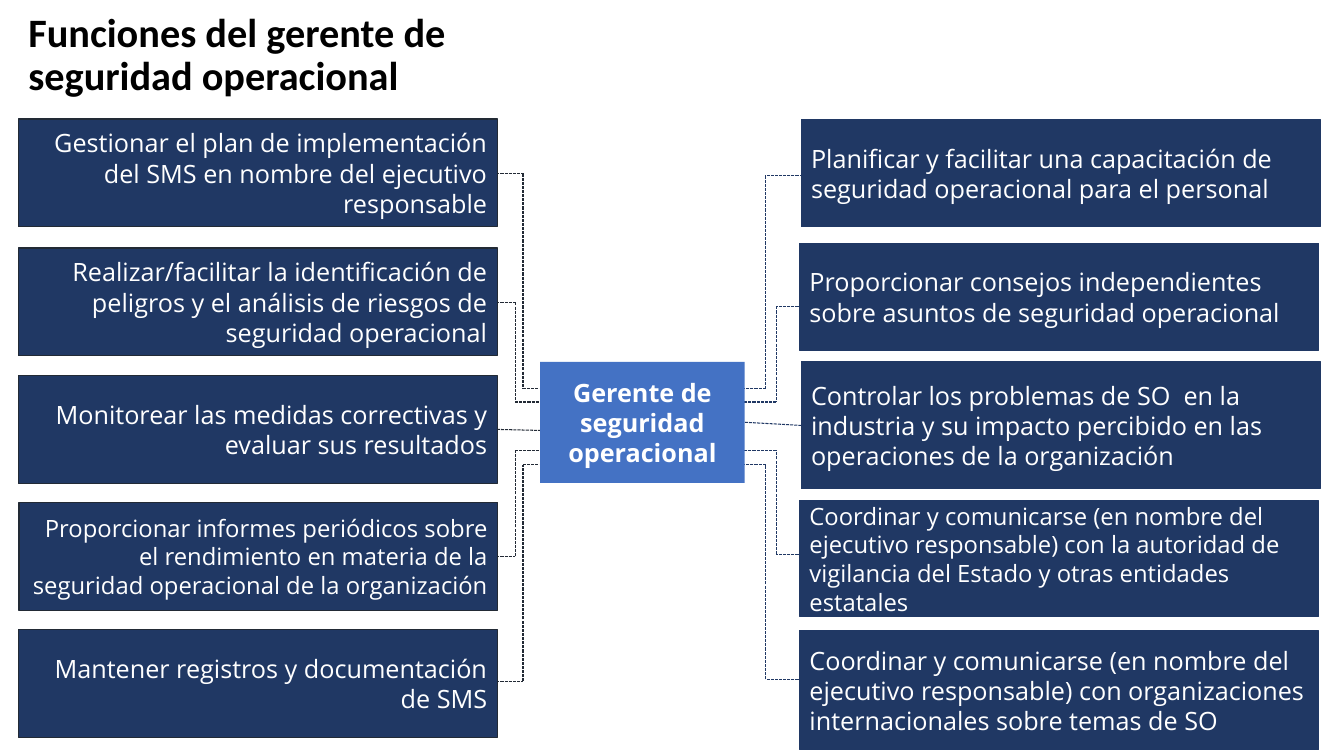
from lxml.etree import SubElement
from pptx import Presentation
from pptx.dml.color import RGBColor
from pptx.enum.dml import MSO_LINE
from pptx.enum.shapes import MSO_CONNECTOR as Link, MSO_SHAPE as Form
from pptx.enum.text import MSO_ANCHOR as Anchor, MSO_AUTO_SIZE as Fit, PP_ALIGN as Align
from pptx.oxml.ns import qn
from pptx.util import Cm, Pt

NAVY, SLATE, BLUE = "203864", "222A35", "4472C4"

LEFT = [
    (0.46, 3.0, 2.72, 18, "Gestionar el plan de implementación del SMS en nombre del ejecutivo responsable"),
    (0.46, 6.25, 2.72, 18, "Realizar/facilitar la identificación de peligros y el análisis de riesgos de seguridad operacional"),
    (0.46, 9.47, 2.72, 18, "Monitorear las medidas correctivas y evaluar sus resultados"),
    (0.48, 12.66, 2.72, 17, "Proporcionar informes periódicos sobre el rendimiento en materia de la seguridad operacional de la organización"),
    (0.46, 15.86, 2.72, 18, "Mantener registros y documentación de SMS"),
]
RIGHT = [
    (20.19, 3.02, 2.7, 18, "Planificar y facilitar una capacitación de seguridad operacional para el personal"),
    (20.15, 6.13, 2.7, 18, "Proporcionar consejos independientes sobre asuntos de seguridad operacional"),
    (20.19, 9.12, 3.2, 18, "Controlar los problemas de SO  en la industria y su impacto percibido en las operaciones de la organización"),
    (20.15, 12.62, 2.92, 17, "Coordinar y comunicarse (en nombre del ejecutivo responsable) con la autoridad de vigilancia del Estado y otras entidades estatales"),
    (20.15, 15.9, 3.0, 18, "Coordinar y comunicarse (en nombre del ejecutivo responsable) con organizaciones internacionales sobre temas de SO"),
]
PORTS = [9.78, 10.13, 11.35, 11.71]
SIDES = [
    (LEFT, 12.07, SLATE, Align.RIGHT, 9.7, (13.18, 12.98), 14.22,
     (4.37, 7.62, 14.02, 17.17), (12.52, 10.82, 13.77, 10.85)),
    (RIGHT, 13.08, NAVY, Align.LEFT, 23.14, (19.3, 19.56), 18.16,
     (4.42, 7.72, 13.97, 17.12), (18.77, 10.64, 20.19, 10.72)),
]


def tint(code):
    """Turn a hex string into a colour."""
    return RGBColor.from_string(code)


class Deck:
    """Hold the text style and the current slide."""

    def __init__(self):
        """Open a title-only slide."""
        self.show = Presentation()
        self.show.slide_width, self.show.slide_height = Cm(33.87), Cm(19.05)
        self.slide = self.show.slides.add_slide(self.show.slide_layouts[5])
        self.style = {"name": "Open Sans", "size": Pt(18), "bold": False}

    def label(self, shape, text, anchor, align, ink, **style):
        """Fill a shape with one styled paragraph."""
        frame = shape.text_frame
        frame.text = text
        for key, value in {"word_wrap": True, "auto_size": Fit.NONE, "vertical_anchor": anchor}.items():
            setattr(frame, key, value)
        par = frame.paragraphs[0]
        par.alignment = align
        font = par.runs[0].font
        for key, value in {**self.style, **style}.items():
            setattr(font, key, value)
        font.color.rgb = tint(ink)
        return par

    def title(self, text, *place):
        """Place and format the title."""
        head = self.slide.shapes.title
        for key, value in zip(("left", "top", "width", "height"), place):
            setattr(head, key, Cm(value))
        par = self.label(head, text, Anchor.BOTTOM, Align.LEFT, "000000",
                         name="Calibri", size=Pt(28.8), bold=True)
        par.line_spacing = 0.9

    def box(self, place, text, fill, edge, align, **style):
        """Draw a filled box with text."""
        shape = self.slide.shapes.add_shape(Form.RECTANGLE, *map(Cm, place))
        shape.shadow.inherit = False
        shape.fill.solid()
        shape.fill.fore_color.rgb = tint(fill)
        if edge:
            shape.line.color.rgb = tint(edge)
            shape.line.width = Pt(0.75)
        else:
            shape.line.fill.background()
        self.label(shape, text, Anchor.MIDDLE, align, "FFFFFF", **style)

    def dash(self, ink, *ends):
        """Draw a dashed line between two points."""
        link = self.slide.shapes.add_connector(Link.STRAIGHT, *map(Cm, ends))
        link.line.color.rgb = tint(ink)
        link.line.width = Pt(0.75)
        link.line.dash_style = MSO_LINE.SQUARE_DOT
        SubElement(link.element.spPr, qn("a:effectLst"))

    def elbow(self, ink, start, bend, end, row, port):
        """Join a box row to a hub port in three strokes."""
        self.dash(ink, start, row, bend, row)
        self.dash(ink, bend, row, bend, port)
        self.dash(ink, bend, port, end, port)


def main():
    """Build and save the slide."""
    deck = Deck()
    deck.title("Funciones del gerente de seguridad operacional", 0.46, 0.28, 11.05, 2.36)
    for boxes, width, ink, align, start, (outer, inner), end, rows, mid in SIDES:
        for row, port, bend in zip(rows, PORTS, (outer, inner, inner, outer)):
            deck.elbow(ink, start, bend, end, row, port)
        for left, top, height, size, text in boxes:
            deck.box((left, top, width, height), text, NAVY, ink, align, size=Pt(size))
        deck.dash(ink, *mid)
    deck.box((13.61, 9.12, 5.16, 3.05), "Gerente de seguridad operacional",
             BLUE, None, Align.CENTER, bold=True)
    deck.show.save("out.pptx")


if __name__ == "__main__":
    main()
